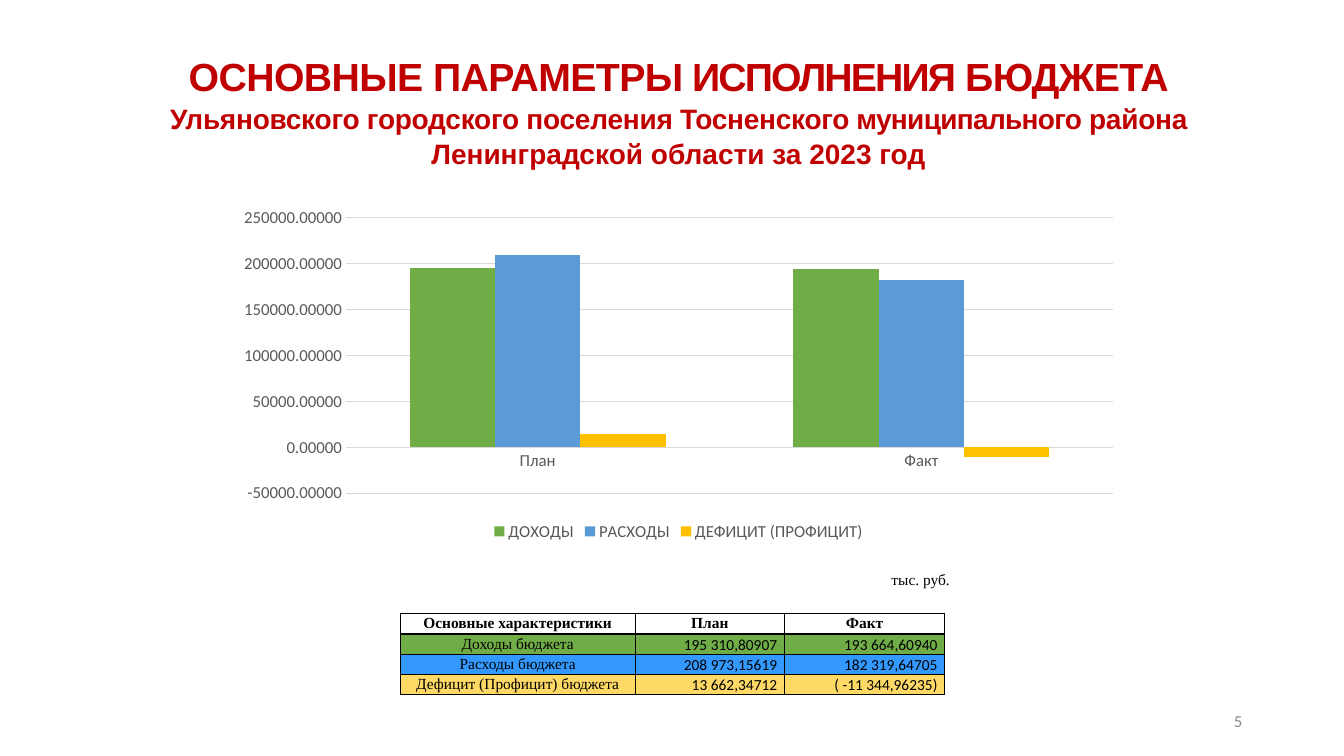
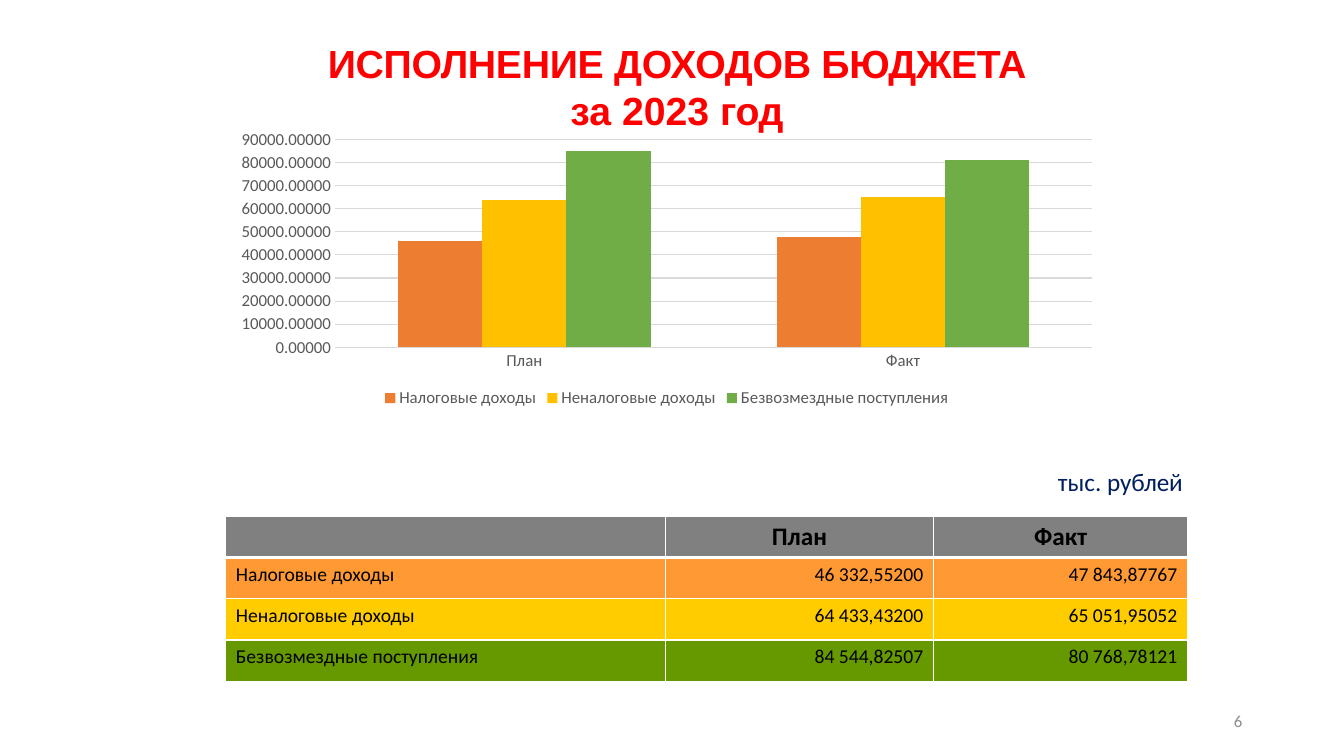
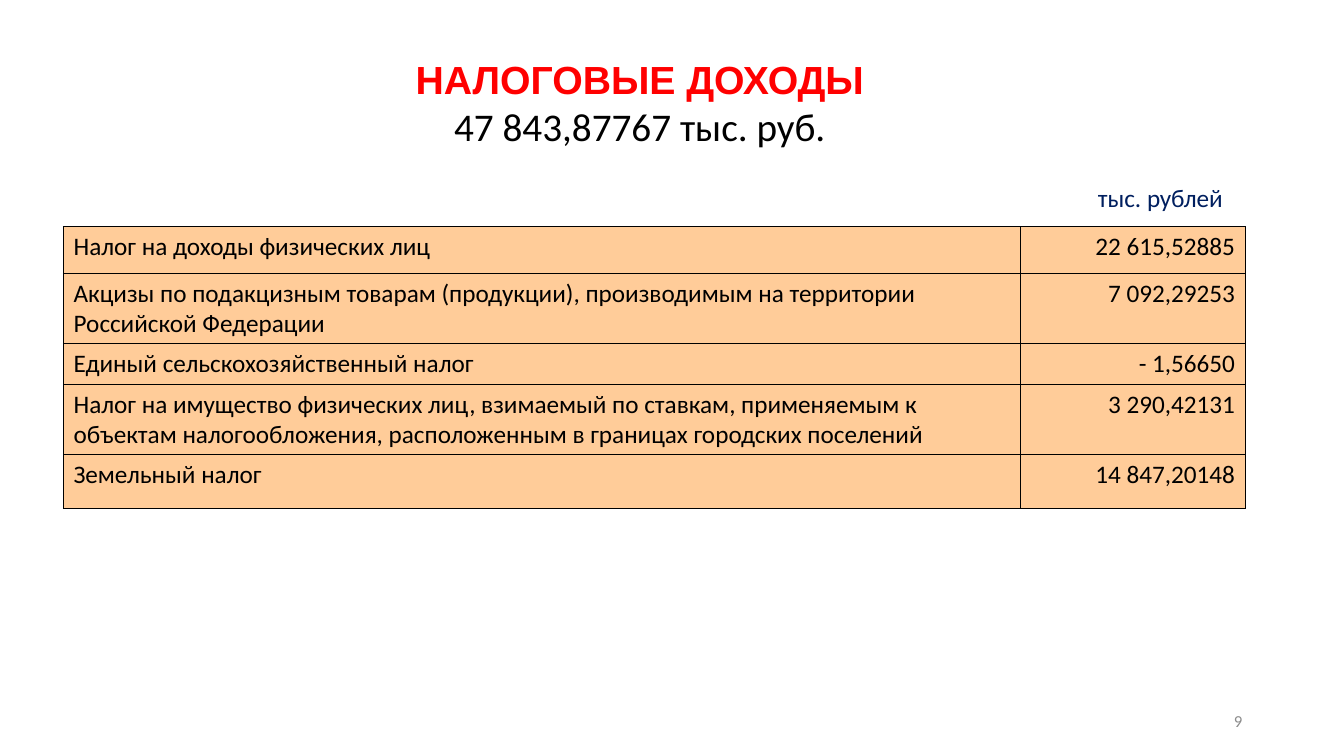
from lxml import etree
from pptx import Presentation
from pptx import util as u
from pptx.chart.data import CategoryChartData
from pptx.dml.color import RGBColor
from pptx.enum import chart as ch, text
from pptx.oxml.ns import qn

PX = 9144  # EMU per px, 100 px to the inch
LEFT, CENTER, RIGHT = text.PP_ALIGN.LEFT, text.PP_ALIGN.CENTER, text.PP_ALIGN.RIGHT
SANS, BODY, SERIF = "Arial", "Calibri", "Times New Roman"
BLACK, WHITE, GRAY, NAVY = "000000", "FFFFFF", "595959", "001F5F"
DARK_RED, RED = "C00000", "FF0000"
GREEN, BLUE, GOLD, ORANGE = "70AD47", "5B9BD5", "FFC000", "ED7D31"
PEACH = "FFCC99"
PERIODS = ["План", "Факт"]


def px(n):
    return u.Emu(n * PX)


def rgb(color):
    return RGBColor.from_string(color)


def style_font(font, size, color, name=BODY, bold=False):
    font.size, font.name, font.bold = u.Pt(size), name, bold
    font.color.rgb = rgb(color)


def border(cell, color, bottom=1):
    """Line all four sides, 1 pt wide except for the bottom."""
    tcPr = cell._tc.get_or_add_tcPr()
    for side, width in zip("LRTB", (1, 1, 1, bottom)):
        ln = etree.SubElement(tcPr, qn("a:ln" + side), w=str(u.Pt(width)))
        fill = etree.SubElement(ln, qn("a:solidFill"))
        etree.SubElement(fill, qn("a:srgbClr"), val=color)


class Deck:
    def __init__(self):
        self.prs = Presentation()
        self.prs.slide_width, self.prs.slide_height = px(1333), px(750)
        self.s = None

    def slide(self, number):
        self.s = self.prs.slides.add_slide(self.prs.slide_layouts[6])
        tf = self.box(942, 695, 300, 40)
        tf.vertical_anchor = text.MSO_ANCHOR.MIDDLE
        self.para(tf, [(str(number), 0)], 12, "8C8C8C", align=RIGHT)

    def box(self, x, y, w, h):
        tf = self.s.shapes.add_textbox(px(x), px(y), px(w), px(h)).text_frame
        tf.word_wrap = True
        return tf

    def para(self, tf, runs, size, color, name=BODY, bold=False, align=CENTER):
        """Add a paragraph of (text, letter spacing in pt) runs."""
        p = tf.paragraphs[0] if not tf.paragraphs[0].runs else tf.add_paragraph()
        p.alignment = align
        for words, spacing in runs:
            r = p.add_run()
            r.text = words
            style_font(r.font, size, color, name, bold)
            if spacing:
                r._r.get_or_add_rPr().set("spc", str(round(spacing * 100)))
        return p

    def heading(self, tf, runs, color=RED, size=28):
        return self.para(tf, runs, size, color, SANS, True)

    def unit(self, x, y, w, align=RIGHT):
        tf = self.box(x, y, w, 40)
        self.para(tf, [("тыс. ", 0), ("рублей", -0.1)], 18, NAVY, align=align)

    def chart(self, x, y, w, h, series, low, high, step):
        data = CategoryChartData(number_format="0.00000")
        data.categories = PERIODS
        for name, values, _ in series:
            data.add_series(name, values)
        chart = self.s.shapes.add_chart(
            ch.XL_CHART_TYPE.COLUMN_CLUSTERED, px(x), px(y), px(w), px(h), data).chart
        chart.has_title = False
        style_font(chart.font, 10, BLACK)
        chart.has_legend = True
        chart.legend.position = ch.XL_LEGEND_POSITION.BOTTOM
        chart.legend.include_in_layout = False
        style_font(chart.legend.font, 12, GRAY)
        plot = chart.plots[0]
        plot.gap_width, plot.overlap, plot.vary_by_categories = 150, 0, False
        for ser, (_, _, color) in zip(plot.series, series):
            ser.invert_if_negative = False
            ser.format.fill.solid()
            ser.format.fill.fore_color.rgb = rgb(color)
        for axis in (chart.category_axis, chart.value_axis):
            axis.major_tick_mark = axis.minor_tick_mark = ch.XL_TICK_MARK.NONE
            axis.format.line.fill.background()
            style_font(axis.tick_labels.font, 12, GRAY)
        axis = chart.value_axis
        axis.minimum_scale, axis.maximum_scale, axis.major_unit = low, high, step
        axis.tick_labels.number_format = "0.00000"
        axis.tick_labels.number_format_is_linked = False
        line = axis.major_gridlines.format.line
        line.color.rgb, line.width = rgb("D9D9D9"), u.Pt(0.75)

    def table(self, x, y, cols, heights, rows):
        """Make an unstyled table of text cells and return it."""
        tbl = self.s.shapes.add_table(
            len(rows), len(cols), px(x), px(y), px(sum(cols)), px(sum(heights))).table
        tbl.first_row = tbl.horz_banding = False
        for col, w in zip(tbl.columns, cols):
            col.width = px(w)
        for row, h, words in zip(tbl.rows, heights, rows):
            row.height = px(h)
            for cell, value in zip(row.cells, words):
                cell.text_frame.text = value
        return tbl

    def style_row(self, row, fill, size, aligns, line=BLACK, bottom=1,
                  names=(BODY,) * 3, bold=False):
        for cell, align, name in zip(row.cells, aligns, names):
            border(cell, line, bottom)
            if fill:
                cell.fill.solid()
                cell.fill.fore_color.rgb = rgb(fill)
            else:
                cell.fill.background()
            p = cell.text_frame.paragraphs[0]
            p.alignment = align
            for r in p.runs:
                style_font(r.font, size, BLACK, name, bold)


def budget_slide(d):
    d.slide(5)
    tf = d.box(72, 47, 1202, 126)
    d.heading(tf, [("ОСНОВНЫЕ ПАРАМЕТРЫ", -0.4), (" ИСПОЛНЕНИЯ ", -1.3),
                   ("БЮДЖЕТА", -0.4)], DARK_RED)
    p = d.heading(tf, [("Ульяновского городского поселения Тосненского", -0.2),
                       (" муниципального ", -0.5), ("района ", -0.2),
                       ("Ленинградской области за 2023 год", 0)], DARK_RED, 20)
    p.space_before, p.line_spacing = u.Pt(1), 1.03
    d.chart(224, 199, 898, 342, [
        ("ДОХОДЫ", (195000, 194000), GREEN),
        ("РАСХОДЫ", (209000, 182000), BLUE),
        ("ДЕФИЦИТ (ПРОФИЦИТ)", (14000, -11000), GOLD)], -50000, 250000, 50000)
    d.para(d.box(285, 561, 667, 29), [("тыс. руб.", 0)], 11, BLACK, SERIF, align=RIGHT)
    tbl = d.table(397, 609, (233, 148, 159), [20] * 4, [
        ("Основные характеристики", *PERIODS),
        ("Доходы бюджета", "195 310,80907", "193 664,60940"),
        ("Расходы бюджета", "208 973,15619", "182 319,64705"),
        ("Дефицит (Профицит) бюджета", "13 662,34712", "( -11 344,96235)")])
    head, *body = tbl.rows
    d.style_row(head, None, 11, [CENTER] * 3, names=[SERIF] * 3, bold=True)
    for row, fill in zip(body, (GREEN, "3399FF", "FFD966")):
        d.style_row(row, fill, 11, (CENTER, RIGHT, RIGHT), names=(SERIF, BODY, BODY))
    for cell in tbl.iter_cells():
        cell.margin_left = cell.margin_right = px(7)
        cell.margin_top = cell.margin_bottom = 0
        cell.text_frame.paragraphs[0].line_spacing = 1.07


def income_slide(d):
    d.slide(6)
    tf = d.box(303, 34, 737, 104)
    d.heading(tf, [("ИСПОЛНЕНИЕ ДОХОДОВ БЮДЖЕТА", -0.2)])
    d.heading(tf, [("за 2023 ", 0), ("год", -0.2)])
    d.unit(1019, 458, 164)
    d.chart(222, 123, 879, 286, [
        ("Налоговые доходы", (46000, 48000), ORANGE),
        ("Неналоговые доходы", (64000, 65000), GOLD),
        ("Безвозмездные поступления", (85000, 81000), GREEN)], 0, 90000, 10000)
    tbl = d.table(224, 512, (436, 266, 252), [41] * 4, [
        ("", *PERIODS),
        ("Налоговые доходы", "46 332,55200", "47 843,87767"),
        ("Неналоговые доходы", "64 433,43200", "65 051,95052"),
        ("Безвозмездные поступления", "84 544,82507", "80 768,78121")])
    head, *body = tbl.rows
    d.style_row(head, "808080", 18, [CENTER] * 3, WHITE, bottom=3, bold=True)
    for row, fill in zip(body, ("FF9933", "FFCC00", "669900")):
        d.style_row(row, fill, 14, (LEFT, RIGHT, RIGHT), WHITE)


def tax_slide(d):
    d.slide(9)
    tf = d.box(301, 50, 667, 104)
    d.heading(tf, [("НАЛОГОВЫЕ ", 0), ("ДОХОДЫ", -0.1)])
    d.para(tf, [("47 843,87767 тыс. руб.", 0)], 28, BLACK)
    tbl = d.table(63, 225, (949, 223), (46, 67, 40, 70, 53), [
        ("Налог на доходы физических лиц", "22 615,52885"),
        ("Акцизы по подакцизным товарам (продукции), производимым на территории "
         "Российской Федерации", "7 092,29253"),
        ("Единый сельскохозяйственный налог", "- 1,56650"),
        ("Налог на имущество физических лиц, взимаемый по ставкам, применяемым к "
         "объектам налогообложения, расположенным в границах городских поселений",
         "3 290,42131"),
        ("Земельный налог", "14 847,20148")])
    for row in tbl.rows:
        d.style_row(row, PEACH, 18, (LEFT, RIGHT))
    d.unit(1079, 176, 157, LEFT)


def main():
    d = Deck()
    for build in (budget_slide, income_slide, tax_slide):
        build(d)
    d.prs.save("out.pptx")


if __name__ == "__main__":
    main()
